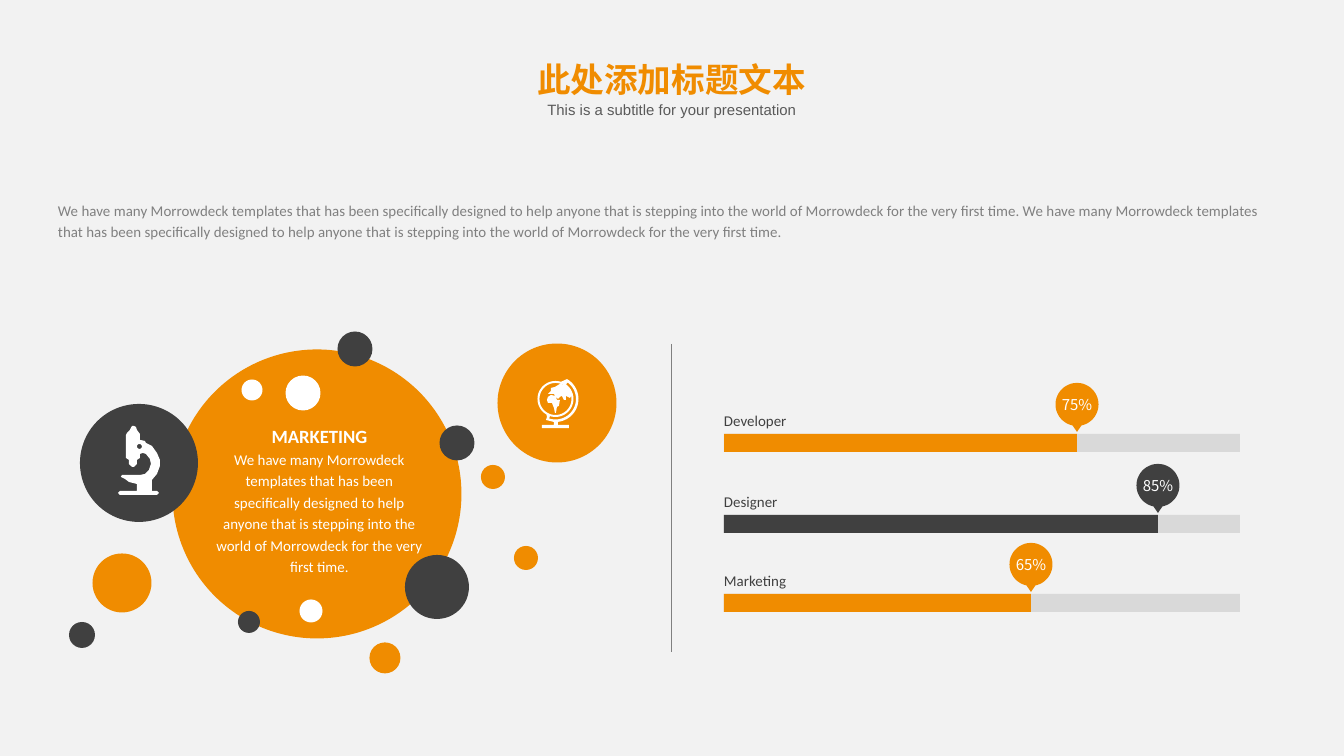
from math import cos, sin, radians
from lxml.etree import SubElement
from pptx import Presentation
from pptx.dml.color import RGBColor
from pptx.enum.shapes import MSO_CONNECTOR, MSO_SHAPE
from pptx.enum.text import MSO_ANCHOR, MSO_AUTO_SIZE, PP_ALIGN
from pptx.oxml.ns import qn
from pptx.util import Pt

PX = 914400 / 134.4
FINE = 100
COLORS = {"bg": "F2F2F2", "orange": "F08C00", "dark": "404040", "white": "FFFFFF",
          "track": "D9D9D9", "gray": "808080", "sub": "595959"}
CJK = "Noto Sans CJK SC"

TITLE = "此处添加标题文本"
SUBTITLE = "This is a subtitle for your presentation"
SENTENCE = ("We have many Morrowdeck templates that has been specifically designed to help "
            "anyone that is stepping into the world of Morrowdeck for the very first time.")
HEADING = "MARKETING"

# centre x, centre y, diameter, colour
BUBBLES = [
    (317, 494, 289, "orange"), (303, 393, 35, "white"), (355, 349, 35, "dark"),
    (252, 390, 21, "white"), (457, 443, 35, "dark"), (493, 477, 24, "orange"),
    (526, 558, 24, "orange"), (437, 587, 64, "dark"), (249, 622, 22, "dark"),
    (311, 611, 23, "white"), (385, 658, 31, "orange"), (122, 583, 59, "orange"),
    (82, 635, 26, "dark"), (139, 463, 118, "dark"), (557, 403, 119, "orange"),
]

# label, value, bar top, filled length, colour
BARS = [("Developer", "75%", 434, 353, "orange"),
        ("Designer", "85%", 515, 434, "dark"),
        ("Marketing", "65%", 594, 307, "orange")]
BAR_X, BAR_W, BAR_H = 724, 516, 18
PIN_R, PIN_H, PIN_RISE = 21.5, 49, 51

MICROSCOPE = [
    (157, 491), (152, 491), (152, 480), (157, 474), (160, 466), (160, 460), (157, 453),
    (152, 446), (146, 443), (145, 441), (140, 440), (140, 434), (137, 430), (136, 427),
    (134, 426), (132, 426), (130, 430), (127, 433), (126, 435), (126, 458), (129, 460),
    (129, 464), (132, 467), (134, 467), (137, 464), (137, 460), (140, 458), (140, 454),
    (143, 453), (146, 454), (150, 459), (151, 464), (149, 470), (145, 474), (140, 475),
    (122, 475), (121, 477), (125, 479), (129, 482), (137, 484), (137, 491), (120, 491),
    (118, 493), (120, 495), (157, 495), (159, 493)]
GLOBE = (555.5, 399)
GLOBE_FOOT = [(558, 425), (569, 425), (569, 428), (542, 428), (542, 425), (554, 425),
              (554, 422), (546, 420), (547, 417)]
GLOBE_LAND = [
    (560, 384), (555, 387), (551, 388), (551, 391), (548, 394), (551, 394), (554, 394),
    (555, 396), (551, 395), (548, 397), (547, 400), (548, 403), (552, 403), (554, 408),
    (555, 413), (556, 413), (557, 407), (559, 406), (560, 400), (557, 400), (556, 397),
    (558, 399), (560, 397), (562, 396), (564, 400), (566, 400), (566, 396), (570, 398),
    (572, 395), (570, 389), (566, 385)]


def px(n):
    return round(n * PX)


def rgb(name):
    return RGBColor.from_string(COLORS[name])


def paint(sp, color):
    sp.fill.solid()
    sp.fill.fore_color.rgb = rgb(color)
    sp.line.fill.background()
    sp.shadow.inherit = False


def add_block(kind, x, y, w, h, color):
    paint(shapes.add_shape(kind, px(x), px(y), px(w), px(h)), color)


def add_outline(contours, color):
    first, *holes = [[(x * FINE, y * FINE) for x, y in c] for c in contours]
    fb = shapes.build_freeform(*first[0], scale=PX / FINE)
    fb.add_line_segments(first[1:])
    for hole in holes:
        fb.move_to(*hole[0])
        fb.add_line_segments(hole[1:])
    paint(fb.convert_to_shape(), color)


def arc(cx, cy, r, start, end, step=6):
    return [(cx + r * cos(radians(a)), cy + r * sin(radians(a)))
            for a in range(start, end + 1, step)]


def add_text(text, x, y, w, h, sp=None, size=8, font="Calibri", color="dark", bold=False,
             align=PP_ALIGN.LEFT, spacing=1, wrap=True, heading=None):
    sp = sp or shapes.add_textbox(0, 0, 0, 0)
    sp.left, sp.top, sp.width, sp.height = px(x), px(y), px(w), px(h)
    tf = sp.text_frame
    tf.auto_size = MSO_AUTO_SIZE.NONE
    tf.word_wrap = wrap
    tf.vertical_anchor = MSO_ANCHOR.TOP
    tf.margin_left = tf.margin_right = tf.margin_top = tf.margin_bottom = 0
    lines = [(text, size, bold)]
    if heading:
        lines.insert(0, (heading, size + 2, True))
    for i, (line, pt, b) in enumerate(lines):
        p = tf.add_paragraph() if i else tf.paragraphs[0]
        p.alignment, p.line_spacing = align, spacing
        r = p.add_run()
        r.text = line
        r.font.size, r.font.bold, r.font.name = Pt(pt), b, font
        r.font.color.rgb = rgb(color)
        if font == CJK:
            SubElement(r.font._element, qn("a:ea"), typeface=font)


prs = Presentation()
prs.slide_width, prs.slide_height = px(1344), px(756)
s = prs.slides.add_slide(prs.slide_layouts[5])
s.background.fill.solid()
s.background.fill.fore_color.rgb = rgb("bg")
shapes = s.shapes

CENTER = PP_ALIGN.CENTER
add_text(TITLE, 508, 59, 327, 42, sp=shapes.title, size=18, font=CJK, color="orange",
         bold=True, align=CENTER)
add_text(SUBTITLE, 540, 101, 264, 18, font="Arial", color="sub", align=CENTER)
add_text(f"{SENTENCE} {SENTENCE}", 58, 198, 1227, 43, color="gray", spacing=1.2)

for cx, cy, d, color in BUBBLES:
    add_block(MSO_SHAPE.OVAL, cx - d / 2, cy - d / 2, d, d, color)
add_outline([MICROSCOPE, arc(139.5, 446.5, 2.5, 0, 330, 30)], "white")
globe_stand = arc(*GLOBE, 23, -60, 84) + GLOBE_FOOT + arc(*GLOBE, 18, 120, 288)
globe_gap = arc(*GLOBE, 18, -54, 108) + arc(*GLOBE, 20.5, -54, 108)[::-1]
add_outline([globe_stand, globe_gap, arc(*GLOBE, 16, 0, 354)], "white")
add_outline([GLOBE_LAND], "white")
add_text(SENTENCE, 214, 420, 211, 156, color="white", align=CENTER, spacing=1.2,
         heading=HEADING)

ln = shapes.add_connector(MSO_CONNECTOR.STRAIGHT, px(671), px(344), px(671), px(652))
ln.line.color.rgb = rgb("gray")
ln.line.width = Pt(0.5)
SubElement(ln._element.spPr, qn("a:effectLst"))

for label, value, y, length, color in BARS:
    tip, top = BAR_X + length, y - PIN_RISE
    add_block(MSO_SHAPE.RECTANGLE, BAR_X, y, BAR_W, BAR_H, "track")
    add_block(MSO_SHAPE.RECTANGLE, BAR_X, y, length, BAR_H, color)
    add_outline([arc(tip, top + PIN_R, PIN_R, 102, 438) + [(tip, top + PIN_H)]], color)
    add_text(value, tip - 16, top + 13, 32, 18, font=CJK, color="white", align=CENTER,
             wrap=False)
    add_text(label, BAR_X, y - 22, 80, 18, wrap=False)

prs.save("out.pptx")
